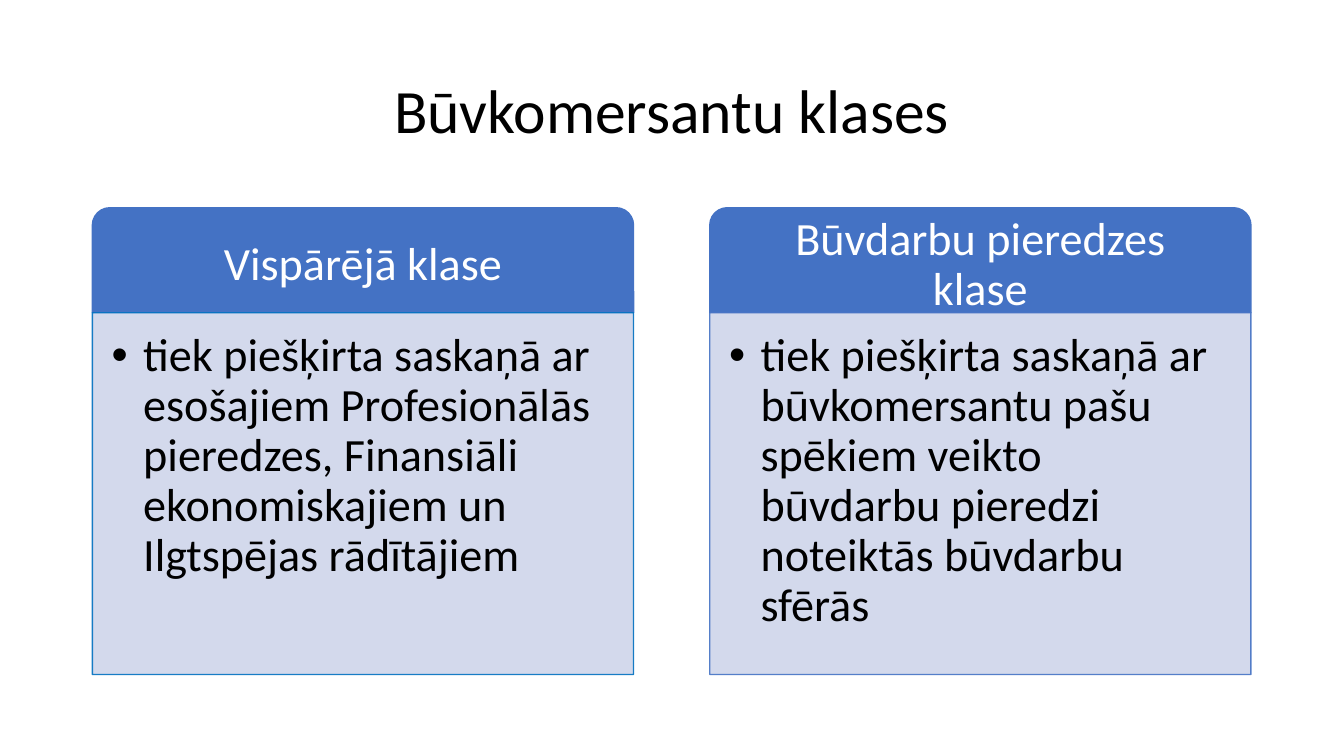
"""Build a slide that compares two classes of construction firms."""
from lxml import etree
from pptx import Presentation
from pptx import util as u
from pptx.dml import color
from pptx.enum import shapes, text
from pptx.oxml import ns

BLUE = "4472C4"
CLASSES = [
    ("Vispārējā klase", "0070C0",
     "tiek piešķirta saskaņā ar esošajiem Profesionālās pieredzes, "
     "Finansiāli ekonomiskajiem un Ilgtspējas rādītājiem"),
    ("Būvdarbu pieredzes klase", BLUE,
     "tiek piešķirta saskaņā ar būvkomersantu pašu spēkiem veikto "
     "būvdarbu pieredzi noteiktās būvdarbu sfērās"),
]
LEFT, STEP, WIDTH = 66, 441, 386.6
TOP, HEAD, BODY = 148.4, 75, 258.4


def rgb(code):
    """Turn a hex string into a colour."""
    return color.RGBColor.from_string(code)


def assign(item, values):
    """Set every attribute named in a dict."""
    for name, value in values.items():
        setattr(item, name, value)


def place(shape, box):
    """Move and size a shape in points."""
    assign(shape, dict(zip(("left", "top", "width", "height"), map(u.Pt, box))))


def write(shape, words, size, ink, align, anchor, pads):
    """Fill a shape with one paragraph and return that paragraph."""
    frame = shape.text_frame
    sides = ("margin_left", "margin_top", "margin_right", "margin_bottom")
    assign(frame, dict(zip(sides, map(u.Pt, pads))))
    assign(frame, {"word_wrap": True, "vertical_anchor": anchor,
                   "auto_size": text.MSO_AUTO_SIZE.NONE})
    para = frame.paragraphs[0]
    assign(para, {"alignment": align, "line_spacing": 0.9})
    run = para.add_run()
    run.text = words
    assign(run.font, {"name": "Calibri", "size": u.Pt(size)})
    run.font.color.rgb = rgb(ink)
    return para


def panel(slide, kind, box, fill, edge):
    """Add a filled and outlined shape."""
    shape = slide.shapes.add_shape(kind, *map(u.Pt, box))
    shape.shadow.inherit = False
    shape.fill.solid()
    shape.fill.fore_color.rgb = rgb(fill)
    shape.line.color.rgb = rgb(edge)
    shape.line.width = u.Pt(1)
    return shape


def fade(shape, share):
    """Make the fill and line of a shape partly see-through."""
    for tone in shape._element.spPr.iter(ns.qn("a:srgbClr")):
        etree.SubElement(tone, ns.qn("a:alpha"), val=str(share * 1000))


def bullet(para, indent):
    """Give a paragraph a round bullet with a hanging indent."""
    props = para._p.get_or_add_pPr()
    props.set("marL", str(u.Pt(indent)))
    props.set("indent", str(-u.Pt(indent)))
    etree.SubElement(props, ns.qn("a:buFont"), typeface="Arial")
    etree.SubElement(props, ns.qn("a:buChar"), char="•")


def card(slide, left, name, edge, detail):
    """Add one class as a heading above its description."""
    kinds, align = shapes.MSO_SHAPE, text.PP_ALIGN
    anchor = text.MSO_ANCHOR
    head = panel(slide, kinds.ROUND_2_SAME_RECTANGLE,
                 (left, TOP, WIDTH, HEAD), BLUE, BLUE)
    write(head, name, 33, "FFFFFF", align.CENTER, anchor.MIDDLE,
          (22, 14.5, 22, 11))
    body = panel(slide, kinds.RECTANGLE,
                 (left, TOP + HEAD, WIDTH, BODY), "CFD5EA", edge)
    fade(body, 90)
    para = write(body, detail, 33, "000000", align.LEFT, anchor.TOP,
                 (13.8, 13.8, 18.5, 20.8))
    bullet(para, 22.5)


def main():
    """Build and save the slide."""
    deck = Presentation()
    assign(deck, {"slide_width": u.Pt(960), "slide_height": u.Pt(540)})
    slide = deck.slides.add_slide(deck.slide_layouts[5])
    title = slide.shapes.title
    place(title, (66, 28.75, 828, 104.4))
    write(title, "Būvkomersantu klases", 44, "000000", text.PP_ALIGN.CENTER,
          text.MSO_ANCHOR.MIDDLE, (7.2, 3.6, 7.2, 3.6))
    for rank, (name, edge, detail) in enumerate(CLASSES):
        card(slide, LEFT + rank * STEP, name, edge, detail)
    deck.save("out.pptx")


if __name__ == "__main__":
    main()
